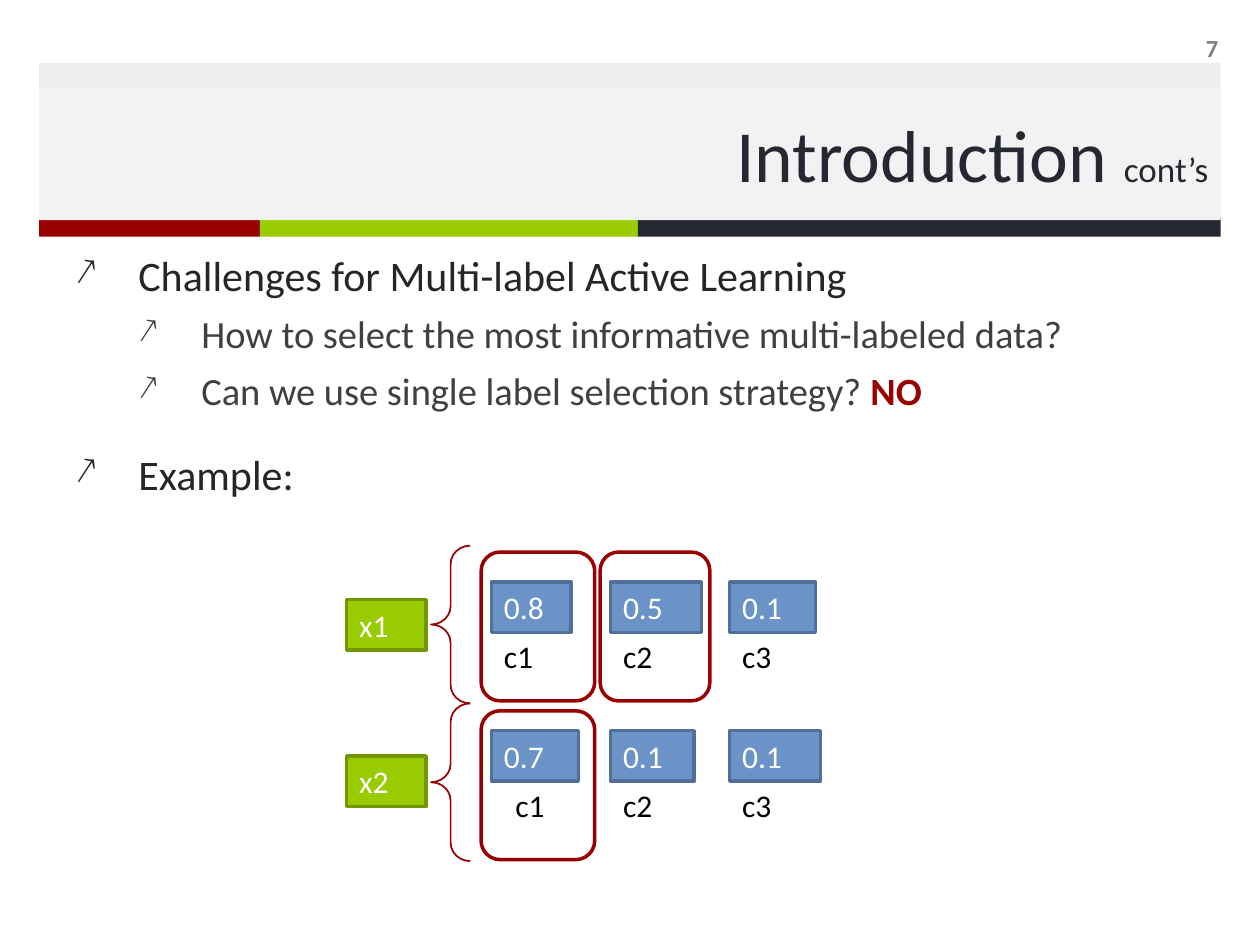
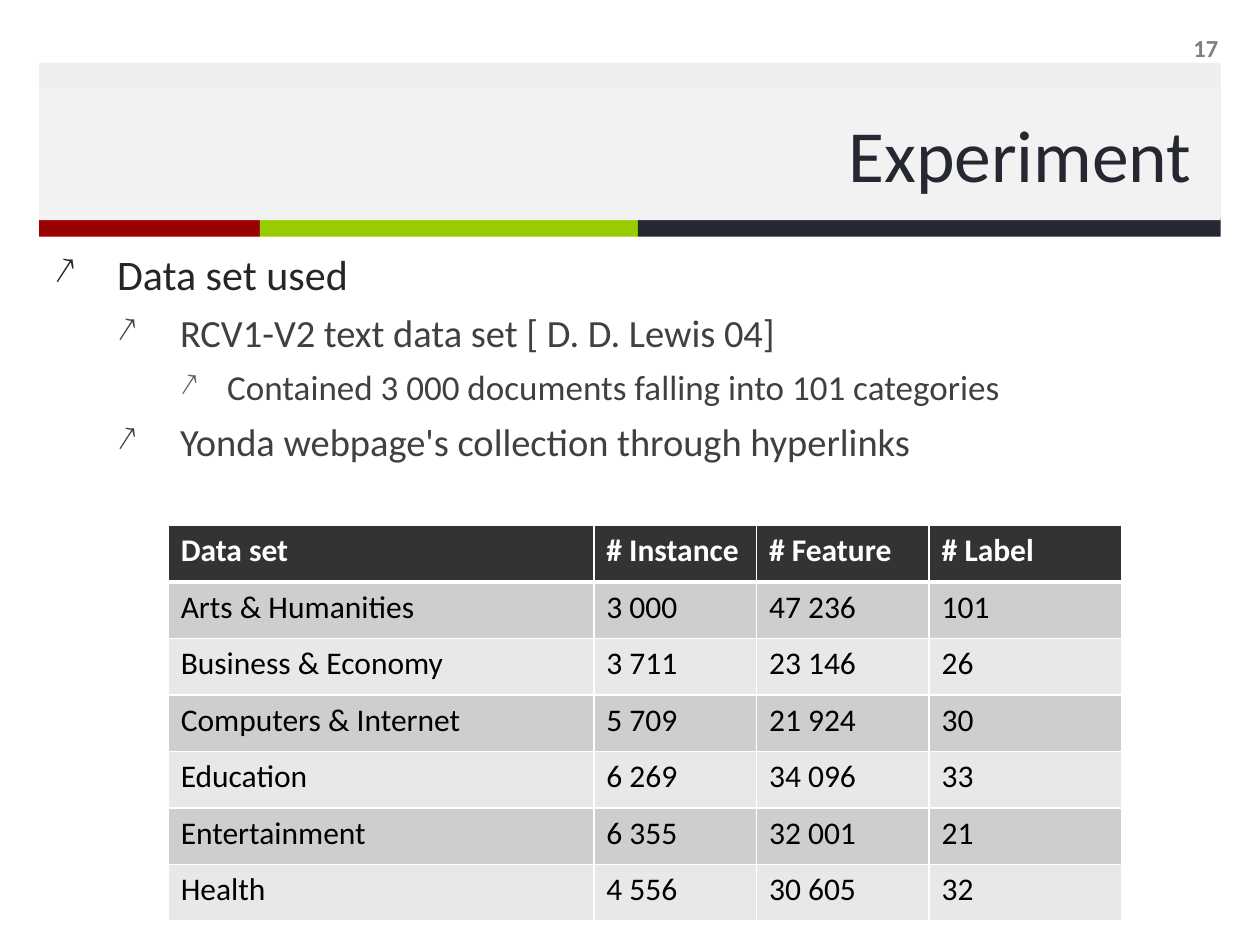
"""Build two slides on multi-label active learning: a scoring example and the data sets."""
import dataclasses

import lxml.etree
import pptx
import pptx.dml.color
import pptx.enum.shapes
import pptx.enum.text
import pptx.oxml.ns
import pptx.util

Cm = pptx.util.Cm
Pt = pptx.util.Pt
qn = pptx.oxml.ns.qn
SHAPE = pptx.enum.shapes.MSO_SHAPE
ALIGN = pptx.enum.text.PP_ALIGN
ANCHOR = pptx.enum.text.MSO_ANCHOR


@dataclasses.dataclass(frozen=True)
class Theme:
    font: str = "Calibri"
    white: str = "FFFFFF"
    black: str = "000000"
    red: str = "990000"
    green: str = "99CC00"
    green_edge: str = "719700"
    navy: str = "252731"
    blue: str = "6B93C8"
    blue_edge: str = "50709B"
    top_band: str = "EAE7E4"
    title_band: str = "F2F2F2"
    number: str = "808080"
    table_header: str = "333333"
    table_rows: tuple = ("CECECE", "E8E8E8")
    level_colors: tuple = ("262626", "404040", "404040")
    bullet_colors: tuple = ("262626", "404040", "595959")
    level_sizes: tuple = (24, 22, 20)
    title_size: int = 42
    title_note_size: int = 20
    text_size: int = 18
    number_size: int = 14


THEME = Theme()
BAND_LEFT, BAND_WIDTH = 0.79, 23.82
STRIPES = ((4.45, THEME.red), (7.62, THEME.green), (11.75, THEME.navy))
LEVEL_INDENTS = ((1.27, 1.27), (2.54, 1.27), (3.49, 0.95))
LEVEL_SPACING = (20, 6, 6)
BOX_HEIGHT = 1.02
SCORE_LEFT, SCORE_TOP = 9.91, 11.73
COLUMN_STEP, ROW_STEP = 2.4, 3.0

EXAMPLES = (
    ("x1", (("0.8", 1.6), ("0.5", 1.83), ("0.1", 1.73)), (0, 0, 0)),
    ("x2", (("0.7", 1.75), ("0.1", 1.68), ("0.1", 1.83)), (0.23, 0, 0)),
)
SELECTED = ((1, 0), (0, 1), (0, 0))

CHALLENGES = (
    (0, (("Challenges for Multi-label Active Learning", {}),)),
    (1, (("How to select the most informative multi-labeled data?", {}),)),
    (1, (("Can we use single label selection strategy? ", {}),
         ("NO", {"color": THEME.red, "bold": True}))),
    (0, (("Example:", {}),)),
)
DATA_SOURCES = (
    (0, (("Data set used", {}),)),
    (1, (("RCV1-V2 text data set [ D. D. Lewis 04]", {}),)),
    (2, (("Contained 3 000 documents falling into 101 categories", {}),)),
    (1, (("Yonda webpage's collection through hyperlinks", {}),)),
)
DATA_COLUMNS = (8.58, 3.28, 3.48, 3.89)
DATA_ROWS = (
    ("Data set", "# Instance", "# Feature", "# Label"),
    ("Arts & Humanities", "3 000", "47 236", "101"),
    ("Business & Economy", "3 711", "23 146", "26"),
    ("Computers & Internet", "5 709", "21 924", "30"),
    ("Education", "6 269", "34 096", "33"),
    ("Entertainment", "6 355", "32 001", "21"),
    ("Health", "4 556", "30 605", "32"),
)


def rgb(color):
    """Turn a hex string into a colour."""
    return pptx.dml.color.RGBColor.from_string(color)


def write(paragraph, text, size=THEME.text_size, color=THEME.black, bold=False, align=None):
    """Append formatted text to a paragraph."""
    run = paragraph.add_run()
    run.text = text
    run.font.name = THEME.font
    run.font.size = Pt(size)
    run.font.bold = bold
    run.font.color.rgb = rgb(color)
    if align is not None:
        paragraph.alignment = align


def add_box(slide, left, top, width, height, kind=SHAPE.RECTANGLE,
            fill=None, edge=None, edge_width=2):
    """Add a preset shape with a plain fill and edge."""
    box = slide.shapes.add_shape(kind, Cm(left), Cm(top), Cm(width), Cm(height))
    box.shadow.inherit = False
    if fill:
        box.fill.solid()
        box.fill.fore_color.rgb = rgb(fill)
    else:
        box.fill.background()
    if edge:
        box.line.color.rgb = rgb(edge)
        box.line.width = Pt(edge_width)
    else:
        box.line.fill.background()
    return box


def add_text_frame(slide, left, top, width, height, anchor=ANCHOR.TOP):
    """Add a wrapping text box and return its frame."""
    frame = slide.shapes.add_textbox(Cm(left), Cm(top), Cm(width), Cm(height)).text_frame
    frame.word_wrap = True
    frame.vertical_anchor = anchor
    return frame


def add_tag(slide, text, left, top, width, fill, edge):
    """Add a filled box with left-aligned white text."""
    tag = add_box(slide, left, top, width, BOX_HEIGHT, fill=fill, edge=edge)
    write(tag.text_frame.paragraphs[0], text, color=THEME.white, align=ALIGN.LEFT)


def add_header(slide, title, number, note=""):
    """Add the bands, the title and the slide number."""
    top_band = add_box(slide, BAND_LEFT, 1.27, BAND_WIDTH, 3.15, fill=THEME.top_band)
    tint = top_band.fill._xPr.find(qn("a:solidFill"))[0]
    lxml.etree.SubElement(tint, qn("a:alpha"), val="70000")
    left = BAND_LEFT
    for width, color in STRIPES:
        add_box(slide, left, 4.39, width, 0.38, fill=color)
        left += width
    title_band = add_box(slide, BAND_LEFT, 1.75, BAND_WIDTH, 2.69, fill=THEME.title_band)
    heading = title_band.text_frame.paragraphs[0]
    write(heading, title, size=THEME.title_size, color=THEME.navy, align=ALIGN.RIGHT)
    if note:
        write(heading, note, size=THEME.title_note_size, color=THEME.navy)
    corner = add_text_frame(slide, 23.06, 0.46, 1.75, 0.99, ANCHOR.MIDDLE)
    write(corner.paragraphs[0], number, size=THEME.number_size, color=THEME.number,
          bold=True, align=ALIGN.RIGHT)


def set_bullet(paragraph, level):
    """Give a paragraph the arrow bullet, indent and spacing of its level."""
    margin, hanging = LEVEL_INDENTS[level]
    paragraph.level = level
    paragraph.space_before = Pt(LEVEL_SPACING[level])
    properties = paragraph._p.get_or_add_pPr()
    properties.set("marL", str(Cm(margin)))
    properties.set("indent", str(-Cm(hanging)))
    color = lxml.etree.SubElement(properties, qn("a:buClr"))
    lxml.etree.SubElement(color, qn("a:srgbClr"), val=THEME.bullet_colors[level])
    lxml.etree.SubElement(properties, qn("a:buSzPct"), val="90000")
    lxml.etree.SubElement(properties, qn("a:buChar"), char="↗")


def add_outline(slide, points, left, top, width, height):
    """Add a bulleted outline of (level, runs) points."""
    frame = add_text_frame(slide, left, top, width, height)
    for index, (level, runs) in enumerate(points):
        paragraph = frame.add_paragraph() if index else frame.paragraphs[0]
        set_bullet(paragraph, level)
        for text, changes in runs:
            style = {"size": THEME.level_sizes[level], "color": THEME.level_colors[level]}
            write(paragraph, text, **(style | changes))


def add_example(slide):
    """Add the two instances with their label scores and selection frames."""
    for row, column in SELECTED:
        add_box(slide, 9.7 + column * COLUMN_STEP, 11.13 + row * 3.2, 2.29 - column * 0.08, 3,
                SHAPE.ROUNDED_RECTANGLE, fill=THEME.white, edge=THEME.red)
    for row, (instance, scores, label_shifts) in enumerate(EXAMPLES):
        add_tag(slide, instance, 6.99, 12.09 + row * 3.15, 1.6, THEME.green, THEME.green_edge)
        top = SCORE_TOP + row * ROW_STEP
        for column, ((score, width), shift) in enumerate(zip(scores, label_shifts)):
            left = SCORE_LEFT + column * COLUMN_STEP
            add_tag(slide, score, left, top, width, THEME.blue, THEME.blue_edge)
            label = add_text_frame(slide, left + shift, top + 0.99, 1.83, BOX_HEIGHT)
            write(label.paragraphs[0], f"c{column + 1}")
        brace = add_box(slide, 8.69, 11 + row * 3.18, 0.79, 3.18, SHAPE.LEFT_BRACE,
                        edge=THEME.red, edge_width=1)
        brace.adjustments[0] = 0.47


def set_borders(cell, top, bottom):
    """Draw white borders round a cell, in points."""
    properties = cell._tc.get_or_add_tcPr()
    for side, width in (("L", 1), ("R", 1), ("T", top), ("B", bottom)):
        line = lxml.etree.SubElement(properties, qn(f"a:ln{side}"), w=str(Pt(width)))
        fill = lxml.etree.SubElement(line, qn("a:solidFill"))
        lxml.etree.SubElement(fill, qn("a:srgbClr"), val=THEME.white)


def add_data_table(slide, left, top, row_height):
    """Add the table of data sets with a dark header and banded rows."""
    table = slide.shapes.add_table(
        len(DATA_ROWS), len(DATA_COLUMNS), Cm(left), Cm(top),
        Cm(sum(DATA_COLUMNS)), Cm(row_height * len(DATA_ROWS))).table
    for column, width in zip(table.columns, DATA_COLUMNS):
        column.width = Cm(width)
    for row, values in enumerate(DATA_ROWS):
        header = row == 0
        fill = THEME.table_header if header else THEME.table_rows[(row - 1) % 2]
        for column, value in enumerate(values):
            cell = table.cell(row, column)
            set_borders(cell, top=3 if row == 1 else 1, bottom=3 if header else 1)
            cell.fill.solid()
            cell.fill.fore_color.rgb = rgb(fill)
            write(cell.text_frame.paragraphs[0], value, bold=header,
                  color=THEME.white if header else THEME.black)


def main():
    """Build and save both slides."""
    deck = pptx.Presentation()
    deck.slide_width, deck.slide_height = Cm(25.4), Cm(19.05)
    blank = deck.slide_layouts[6]

    introduction = deck.slides.add_slide(blank)
    add_header(introduction, "Introduction ", "7", note="cont’s")
    add_outline(introduction, CHALLENGES, 1.27, 4.9, 22.02, 5.49)
    add_example(introduction)

    experiment = deck.slides.add_slide(blank)
    add_header(experiment, "Experiment ", "17")
    add_outline(experiment, DATA_SOURCES, 0.84, 4.88, 23.75, 12.14)
    add_data_table(experiment, 3.39, 10.59, 1.14)

    deck.save("out.pptx")


if __name__ == "__main__":
    main()
